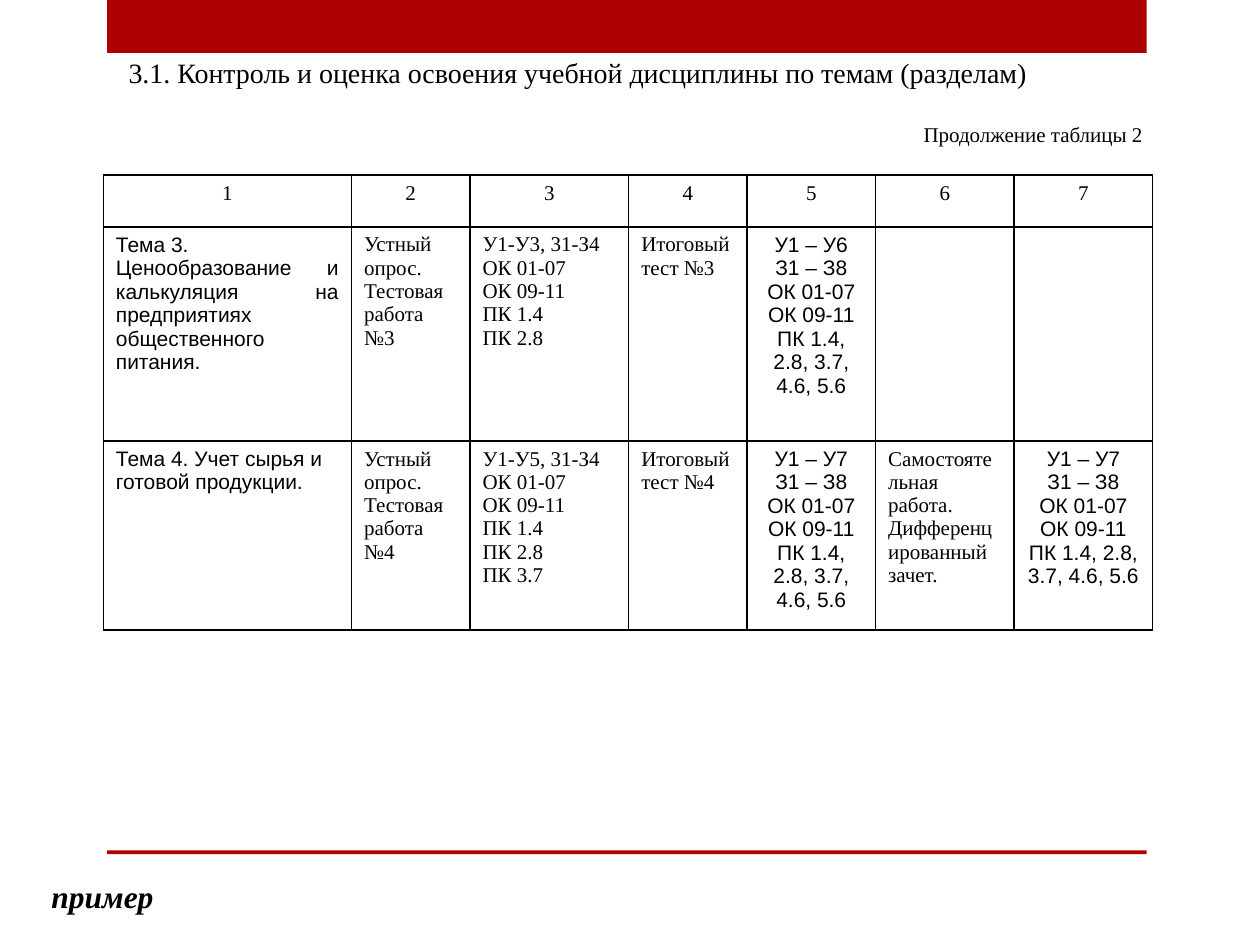
from typing import NamedTuple

import pptx
import pptx.dml.color
import pptx.enum.shapes
import pptx.enum.text
import pptx.oxml.ns
import pptx.util
from lxml import etree

Inches, Pt = pptx.util.Inches, pptx.util.Pt
RGBColor = pptx.dml.color.RGBColor
ALIGN = pptx.enum.text.PP_ALIGN
ANCHOR = pptx.enum.text.MSO_ANCHOR

RED = RGBColor(0xAD, 0x01, 0x01)
BLACK = RGBColor(0, 0, 0)
SERIF, SANS = "Times New Roman", "Arial"


class Bar(NamedTuple):
    top: float
    height: float


class Entry(NamedTuple):
    text: str = ""
    font: str = SERIF
    align: ALIGN = ALIGN.LEFT


BARS = [Bar(0, 0.42), Bar(6.75, 0.03)]
COLS = [1.97, 0.94, 1.26, 0.94, 1.02, 1.1, 1.1]
ROWS = [0.41, 1.7, 1.5]


def codes(last: int) -> Entry:
    """Centred list of skills and competences, up to the given skill."""
    text = f"У1 – У{last}\nЗ1 – З8\nОК 01-07\nОК 09-11\nПК 1.4, 2.8, 3.7, 4.6, 5.6"
    return Entry(text, SANS, ALIGN.CENTER)


def survey(topic: int) -> Entry:
    return Entry(f"Устный опрос.\nТестовая работа №{topic}")


GRID = [
    [Entry(str(num), align=ALIGN.CENTER) for num in range(1, 8)],
    [
        Entry("Тема 3.\nЦенообразование и калькуляция на предприятиях "
              "общественного питания.", SANS, ALIGN.JUSTIFY),
        survey(3),
        Entry("У1-У3, 31-З4\nОК 01-07\nОК 09-11\nПК 1.4\nПК 2.8"),
        Entry("Итоговый тест №3"),
        codes(6), Entry(), Entry(),
    ],
    [
        Entry("Тема 4. Учет сырья и готовой продукции.", SANS),
        survey(4),
        Entry("У1-У5, 31-З4\nОК 01-07\nОК 09-11\nПК 1.4\nПК 2.8\nПК 3.7"),
        Entry("Итоговый тест №4"),
        codes(7),
        Entry("Самостоятельная работа.\nДифференцированный зачет."),
        codes(7),
    ],
]


def style(para, size: float, font: str = SERIF, align: ALIGN = ALIGN.LEFT) -> None:
    para.alignment = align
    para.font.size = Pt(size)
    for run in para.runs:
        run.font.name = font
        run.font.size = Pt(size)
        run.font.color.rgb = BLACK


def draw_bar(slide, bar: Bar) -> None:
    shape = slide.shapes.add_shape(
        pptx.enum.shapes.MSO_SHAPE.RECTANGLE,
        Inches(0.85), Inches(bar.top), Inches(8.25), Inches(bar.height))
    shape.shadow.inherit = False
    shape.fill.solid()
    shape.fill.fore_color.rgb = RED
    shape.line.fill.background()


def frame_cell(cell) -> None:
    """Draw a thin black border on all four sides."""
    qn = pptx.oxml.ns.qn
    props = cell._tc.get_or_add_tcPr()
    for side in ("lnL", "lnR", "lnT", "lnB"):
        line = etree.SubElement(props, qn(f"a:{side}"), w=str(Pt(1)))
        fill = etree.SubElement(line, qn("a:solidFill"))
        etree.SubElement(fill, qn("a:srgbClr"), val=str(BLACK))


def fill_cell(cell, entry: Entry) -> None:
    frame_cell(cell)
    cell.fill.background()
    cell.text_frame.text = entry.text
    for para in cell.text_frame.paragraphs:
        style(para, 12, entry.font, entry.align)


def draw_title(slide) -> None:
    title = slide.shapes.title
    title.left, title.top = Inches(0.82), Inches(0.38)
    title.width, title.height = Inches(8.35), Inches(0.84)
    frame = title.text_frame
    frame.text = ("3.1. Контроль и оценка освоения учебной дисциплины "
                  "по темам (разделам)\nПродолжение таблицы 2")
    frame.auto_size = pptx.enum.text.MSO_AUTO_SIZE.NONE
    frame.vertical_anchor = ANCHOR.MIDDLE
    head, note = frame.paragraphs
    style(head, 16)
    style(note, 12, align=ALIGN.RIGHT)
    note.space_before = Pt(18.4)
    for para in frame.paragraphs:
        para._p.get_or_add_pPr().set("indent", str(Inches(0.1)))


def draw_table(slide) -> None:
    table = slide.shapes.add_table(
        len(ROWS), len(COLS), Inches(0.82), Inches(1.39),
        Inches(sum(COLS)), Inches(sum(ROWS))).table
    table.first_row = table.horz_banding = False
    for col, width in zip(table.columns, COLS):
        col.width = Inches(width)
    for row, height, line in zip(table.rows, ROWS, GRID):
        row.height = Inches(height)
        for cell, entry in zip(row.cells, line):
            fill_cell(cell, entry)


def draw_label(slide) -> None:
    box = slide.shapes.add_textbox(Inches(0.31), Inches(6.91), Inches(1.02), Inches(0.4))
    box.text_frame.text = "пример"
    para = box.text_frame.paragraphs[0]
    style(para, 18)
    para.runs[0].font.bold = para.runs[0].font.italic = True


def main() -> None:
    deck = pptx.Presentation()
    deck.slide_width, deck.slide_height = Inches(10), Inches(7.5)
    slide = deck.slides.add_slide(deck.slide_layouts[5])  # title only

    # Frame of the page
    for bar in BARS:
        draw_bar(slide, bar)

    # Content
    draw_label(slide)
    draw_title(slide)
    draw_table(slide)
    deck.save("out.pptx")


if __name__ == "__main__":
    main()
